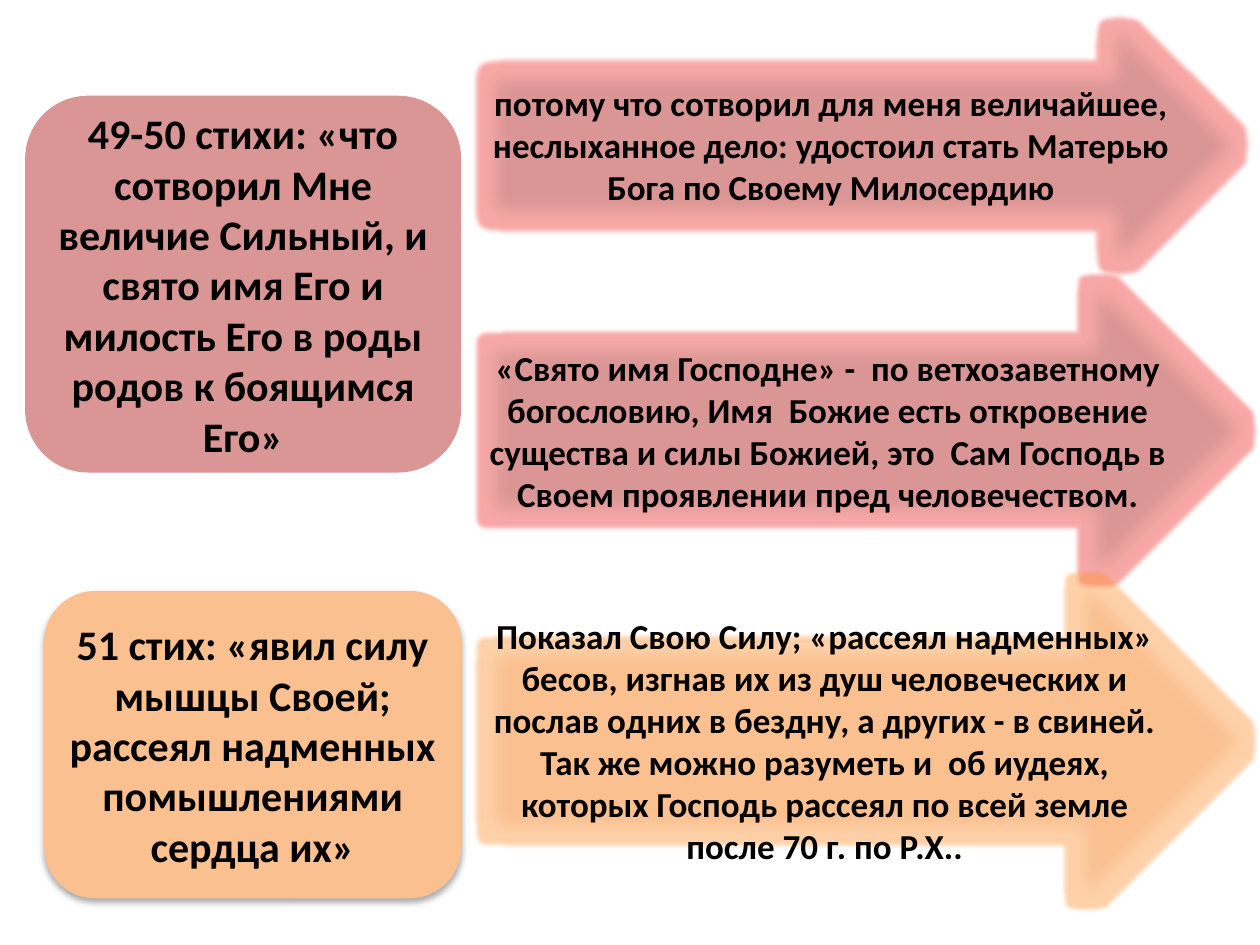
from dataclasses import dataclass
from typing import Optional

from lxml.etree import SubElement
from pptx import Presentation
from pptx.dml.color import RGBColor
from pptx.enum.shapes import MSO_SHAPE as Preset
from pptx.enum.text import MSO_ANCHOR as Anchor, PP_ALIGN as Align
from pptx.oxml.ns import qn
from pptx.util import Pt

COLORS = {
    "rose": "D99694",
    "rose glow": "EE2A24",
    "peach": "FAC090",
    "peach glow": "FF8F2B",
    "red": "FF0000",
    "blue": "3A5F8C",
    "black": "000000",
}
ARROW_LEFT = 275


@dataclass
class Verse:
    left: float
    top: float
    width: float
    height: float
    color: str
    text: str
    raised: bool = False


@dataclass
class Meaning:
    top: float
    width: float
    height: float
    color: str
    outline: str
    text: str


VERSES = [
    Verse(14.4, 54.7, 249.1, 215.3, "rose",
          "49-50 стихи: «что сотворил Мне величие Сильный, и свято имя Его и "
          "милость Его в роды родов к боящимся Его»"),
    Verse(25.2, 337.7, 238.3, 175.7, "peach",
          "51 стих: «явил силу мышцы Своей; рассеял надменных помышлениями "
          "сердца их»", raised=True),
]
MEANINGS = [
    Meaning(-7.9, 445, 181.4, "rose", "red",
            "потому что сотворил для меня величайшее, неслыханное дело: "
            "удостоил стать Матерью Бога по Своему Милосердию"),
    Meaning(139.7, 449.3, 212.4, "rose", "blue",
            "«Свято имя Господне» -  по ветхозаветному богословию, Имя  Божие "
            "есть откровение существа и силы Божией, это  Сам Господь в Своем "
            "проявлении пред человечеством."),
    Meaning(309.6, 449.3, 226.8, "peach", "blue",
            "Показал Свою Силу; «рассеял надменных» бесов, изгнав их из душ "
            "человеческих и послав одних в бездну, а других - в свиней. Так же "
            "можно разуметь и  об иудеях, которых Господь рассеял по всей земле "
            "после 70 г. по Р.Х.."),
]


def rgb(name: str) -> RGBColor:
    return RGBColor.from_string(COLORS[name])


def add_block(slide, preset, left: float, top: float, width: float, height: float,
              color: str, outline: Optional[str], text: str, size: float):
    block = slide.shapes.add_shape(preset, Pt(left), Pt(top), Pt(width), Pt(height))
    block.shadow.inherit = False
    block.fill.solid()
    block.fill.fore_color.rgb = rgb(color)
    if outline:
        block.line.color.rgb = rgb(outline)
        block.line.width = Pt(2)
    else:
        block.line.fill.background()

    frame = block.text_frame
    frame.word_wrap = True
    frame.vertical_anchor = Anchor.MIDDLE
    frame.margin_left = frame.margin_right = 0
    frame.margin_top = frame.margin_bottom = Pt(3.6)
    frame.text = text
    paragraph = frame.paragraphs[0]
    paragraph.alignment = Align.CENTER
    font = paragraph.runs[0].font
    font.name = "Calibri"
    font.size = Pt(size)
    font.bold = True
    font.color.rgb = rgb("black")
    return block


def add_effect(shape, kind: str, color: Optional[str] = None, opacity: int = 100,
               **lengths: int) -> None:
    """Append one effect to the shape's effect list; call in schema order."""
    effects = shape._element.spPr.find(qn("a:effectLst"))
    effect = SubElement(effects, qn(f"a:{kind}"),
                        {key: str(value) for key, value in lengths.items()})
    if color:
        tint = SubElement(effect, qn("a:srgbClr"), val=COLORS[color])
        SubElement(tint, qn("a:alpha"), val=str(opacity * 1000))


def add_verse(slide, verse: Verse) -> None:
    block = add_block(slide, Preset.ROUNDED_RECTANGLE, verse.left, verse.top,
                      verse.width, verse.height, verse.color, None, verse.text, 24)
    if verse.raised:
        block.text_frame.paragraphs[0].space_before = Pt(4.8)
        add_effect(block, "outerShdw", "black", 32, blurRad=Pt(3.5), dist=Pt(2.2),
                   dir=90 * 60000, rotWithShape=0)


def add_meaning(slide, meaning: Meaning) -> None:
    arrow = add_block(slide, Preset.RIGHT_ARROW, ARROW_LEFT, meaning.top,
                      meaning.width, meaning.height, meaning.color,
                      meaning.outline, meaning.text, 20)
    add_effect(arrow, "glow", f"{meaning.color} glow", 40, rad=Pt(5))
    add_effect(arrow, "softEdge", rad=Pt(10))


def main() -> None:
    deck = Presentation()
    deck.slide_width, deck.slide_height = Pt(720), Pt(540)
    slide = deck.slides.add_slide(deck.slide_layouts[6])
    first_verse, second_verse = VERSES
    add_verse(slide, first_verse)
    for meaning in MEANINGS[:2]:
        add_meaning(slide, meaning)
    add_verse(slide, second_verse)
    add_meaning(slide, MEANINGS[2])
    deck.save("out.pptx")


if __name__ == "__main__":
    main()
